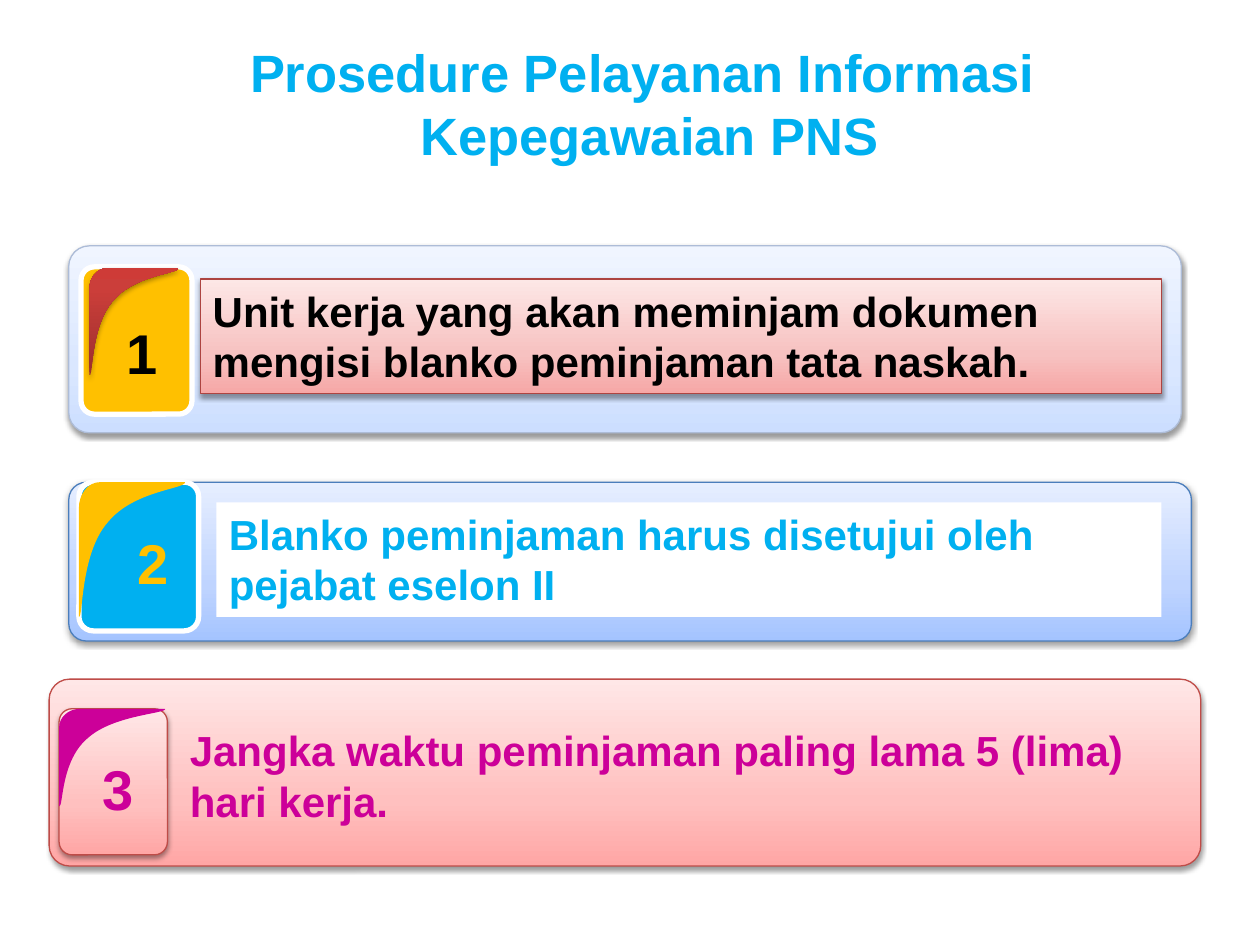
from dataclasses import dataclass
from typing import Optional

from lxml import etree
from pptx import Presentation
from pptx.dml.color import RGBColor
from pptx.enum import shapes, text
from pptx.oxml import ns
from pptx.util import Pt

COLORS = {
    "white": "FFFFFF", "black": "000000", "sky": "00B0F0",
    "gold": "FFC000", "magenta": "CC0099",
    "pale edge": "ADBCD7", "blue edge": "4B7EBC",
    "rose edge": "AD4441", "red edge": "BF4C48",
}
GRADIENTS = {
    "pale": [(0, "CCDEFF"), (35, "DAE7FF"), (100, "F0F5FF")],
    "blue": [(0, "A4C4FF"), (35, "BFD4FF"), (100, "E6EEFF")],
    "rose": [(0, "F6A7A6"), (35, "F7C2C1"), (100, "FDE7E6")],
    "red": [(0, "FFA6A5"), (35, "FFC0BF"), (100, "FFE7E7")],
    "brick": [(0, "9C2F2D"), (80, "CB3E3A"), (100, "CE3B37")],
}
FONT = "Arial"
CORNER_START = (0.2, 0)
CORNER_SEGMENTS = [
    [(0.08, 0), (0, 0.09), (0, 0.19)],
    [(0, 0.98)],
    [(0.04, 1), (0.01, 0.52), (0.27, 0.29)],
    [(0.51, 0.06), (0.99, 0.05), (0.98, 0)],
    [CORNER_START],
]


@dataclass
class Box:
    left: float
    top: float
    width: float
    height: float

    def lengths(self) -> list:
        return [Pt(value) for value in (self.left, self.top, self.width, self.height)]


@dataclass
class Style:
    fill: Optional[str] = None
    line: Optional[str] = None
    line_width: float = 0.75
    shadow: Optional[tuple] = None


@dataclass
class Step:
    number: str
    wording: str
    ink: str
    number_ink: str
    panel: Box
    panel_style: Style
    badge: Box
    badge_style: Style
    corner: Box
    corner_style: Style
    number_box: Box
    text_box: Box
    text_style: Style


SOFT = (38, 3.1, 1.6)
TIGHT = (35, 3.1, 1.8)
RED_PANEL = Style("red", "red edge", shadow=SOFT)
STEPS = [
    Step(" 1", "Unit kerja yang akan meminjam dokumen mengisi blanko peminjaman tata naskah.",
         "black", "black",
         Box(39.3, 140.5, 635.8, 106.8), Style("pale", "pale edge", shadow=SOFT),
         Box(46.3, 152.5, 63.4, 84.2), Style("gold", "white", 3),
         Box(51.1, 153.2, 51.8, 62.6), Style("brick", shadow=TIGHT),
         Box(45, 178.6, 63.4, 51.1),
         Box(114.5, 159.5, 549.4, 65.5), Style("rose", "rose edge", shadow=SOFT)),
    Step("2", "Blanko peminjaman harus disetujui oleh pejabat eselon II",
         "sky", "gold",
         Box(39.3, 275.6, 641.5, 90.7), Style("blue", "blue edge", shadow=SOFT),
         Box(45.1, 275.5, 68.4, 85), Style("sky", "white", 3),
         Box(45.1, 275.5, 61.9, 78.5), Style("gold"),
         Box(50.8, 298.4, 73.4, 46.1),
         Box(123.7, 287, 540, 65.5), Style("white")),
    Step("3", "Jangka waktu peminjaman paling lama 5 (lima) hari kerja.",
         "magenta", "magenta",
         Box(28.1, 388.1, 658.1, 106.8), RED_PANEL,
         Box(33.8, 405, 61.9, 83.5), RED_PANEL,
         Box(33.8, 405, 61.9, 56.9), Style("magenta"),
         Box(39.6, 427.7, 56.2, 46.1),
         Box(101.4, 410.6, 573.8, 65.5), Style()),
]


def rgb(name: str) -> RGBColor:
    return RGBColor.from_string(COLORS[name])


def add_gradient(shape, stops: list) -> None:
    shape.fill.gradient()
    shape.fill.gradient_angle = 90
    stop_list = shape._element.spPr.find(".//" + ns.qn("a:gsLst"))
    for stop in list(stop_list):
        stop_list.remove(stop)
    for position, color in stops:
        stop = etree.SubElement(stop_list, ns.qn("a:gs"), pos=str(position * 1000))
        etree.SubElement(stop, ns.qn("a:srgbClr"), val=color)


def add_shadow(shape, opacity: int, blur: float, distance: float) -> None:
    effects = shape._element.spPr.find(ns.qn("a:effectLst"))
    shadow = etree.SubElement(effects, ns.qn("a:outerShdw"), blurRad=str(Pt(blur)),
                              dist=str(Pt(distance)), dir="5400000", rotWithShape="0")
    color = etree.SubElement(shadow, ns.qn("a:srgbClr"), val=COLORS["black"])
    etree.SubElement(color, ns.qn("a:alpha"), val=str(opacity * 1000))


def apply_style(shape, style: Style) -> None:
    if style.fill in GRADIENTS:
        add_gradient(shape, GRADIENTS[style.fill])
    elif style.fill:
        shape.fill.solid()
        shape.fill.fore_color.rgb = rgb(style.fill)
    if style.line:
        shape.line.color.rgb = rgb(style.line)
        shape.line.width = Pt(style.line_width)
    else:
        shape.line.fill.background()
    shape.shadow.inherit = False
    if style.shadow:
        add_shadow(shape, *style.shadow)


def add_rounded(slide, box: Box, style: Style, rounding: float) -> None:
    shape = slide.shapes.add_shape(shapes.MSO_SHAPE.ROUNDED_RECTANGLE, *box.lengths())
    shape.adjustments[0] = rounding
    apply_style(shape, style)


def add_corner(slide, box: Box, style: Style) -> None:
    def place(point: tuple) -> tuple:
        return Pt(point[0] * box.width), Pt(point[1] * box.height)

    builder = slide.shapes.build_freeform(*place(CORNER_START))
    builder.add_line_segments([place(segment[-1]) for segment in CORNER_SEGMENTS], close=True)
    shape = builder.convert_to_shape(Pt(box.left), Pt(box.top))
    lines = list(shape._element.spPr.iter(ns.qn("a:lnTo")))
    for line, segment in zip(lines, CORNER_SEGMENTS):
        if len(segment) == 3:
            curve = etree.Element(ns.qn("a:cubicBezTo"))
            for point in segment:
                x, y = place(point)
                etree.SubElement(curve, ns.qn("a:pt"), x=str(x), y=str(y))
            line.getparent().replace(line, curve)
    apply_style(shape, style)


def write(shape, lines: list, size: float, color: str, alignment, anchor) -> None:
    frame = shape.text_frame
    frame.word_wrap = True
    frame.auto_size = text.MSO_AUTO_SIZE.NONE
    frame.vertical_anchor = anchor
    frame.text = "\n".join(lines)
    for paragraph in frame.paragraphs:
        paragraph.alignment = alignment
        paragraph.font.name = FONT
        paragraph.font.size = Pt(size)
        paragraph.font.bold = True
        paragraph.font.color.rgb = rgb(color)


def add_step(slide, step: Step) -> None:
    add_rounded(slide, step.panel, step.panel_style, 0.11)
    add_rounded(slide, step.badge, step.badge_style, 0.12)
    add_corner(slide, step.corner, step.corner_style)
    number = slide.shapes.add_textbox(*step.number_box.lengths())
    write(number, [step.number], 32, step.number_ink, text.PP_ALIGN.CENTER, text.MSO_ANCHOR.TOP)
    if step.text_style.fill:
        label = slide.shapes.add_shape(shapes.MSO_SHAPE.RECTANGLE, *step.text_box.lengths())
        apply_style(label, step.text_style)
    else:
        label = slide.shapes.add_textbox(*step.text_box.lengths())
    write(label, [step.wording], 24, step.ink, text.PP_ALIGN.LEFT, text.MSO_ANCHOR.TOP)


def main() -> None:
    presentation = Presentation()
    presentation.slide_width, presentation.slide_height = Pt(720), Pt(540)
    slide = presentation.slides.add_slide(presentation.slide_layouts[5])
    title = slide.shapes.title
    title.left, title.top, title.width, title.height = Box(33.6, 22.3, 675.4, 73.4).lengths()
    write(title, ["Prosedure Pelayanan Informasi ", "Kepegawaian PNS"], 30, "sky",
          text.PP_ALIGN.CENTER, text.MSO_ANCHOR.MIDDLE)
    for step in STEPS:
        add_step(slide, step)
    presentation.save("out.pptx")


if __name__ == "__main__":
    main()
